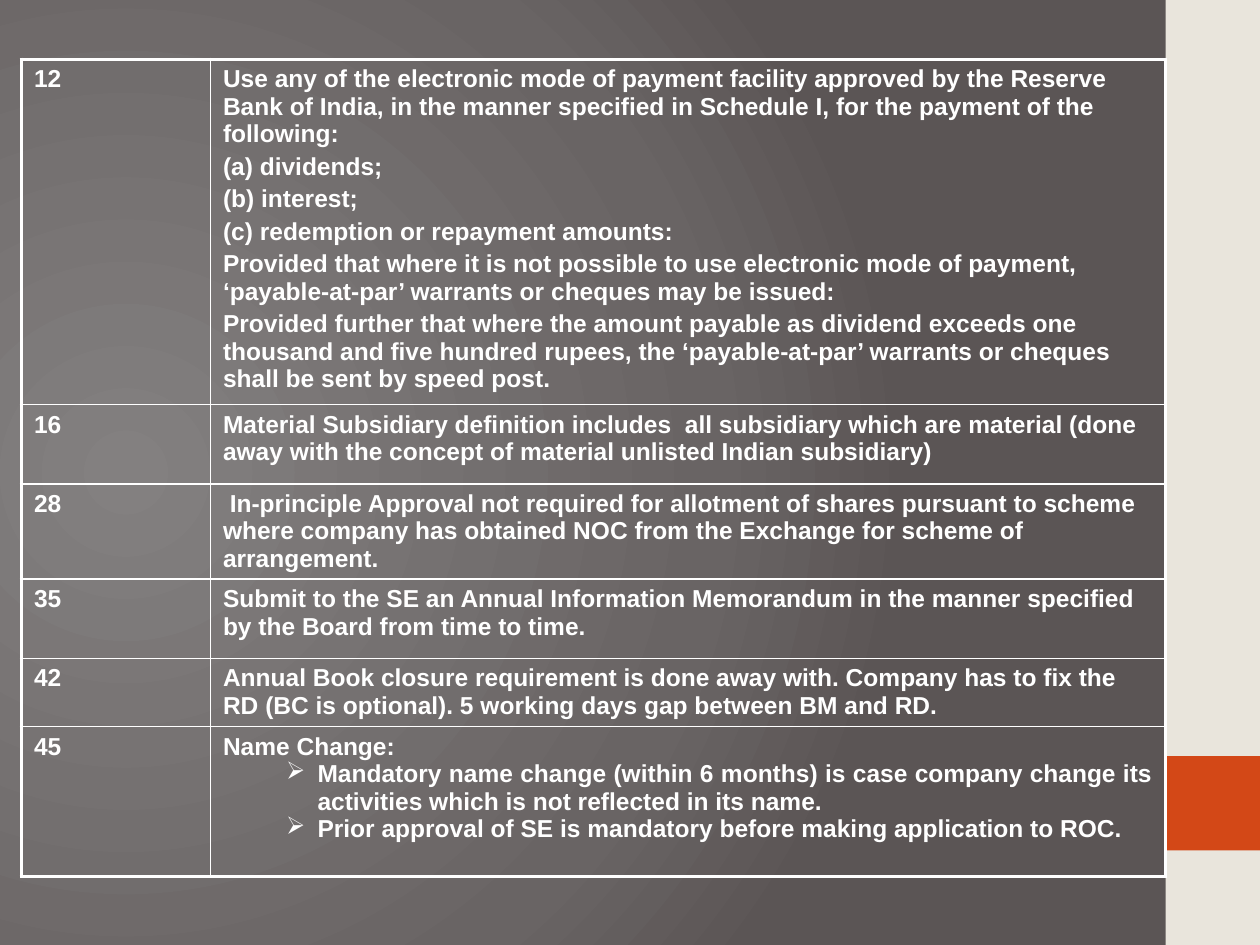
from lxml import etree
from pptx import Presentation
from pptx.dml.color import RGBColor
from pptx.enum.shapes import MSO_SHAPE
from pptx.enum.text import PP_ALIGN
from pptx.oxml import parse_xml
from pptx.oxml.ns import nsdecls, qn
from pptx.util import Inches, Pt

RECTANGLE = MSO_SHAPE.RECTANGLE
JUSTIFY = PP_ALIGN.JUSTIFY
WHITE = "FFFFFF"
THIN, THICK = Pt(1), Pt(2.25)
BULLET = "➢"

ROWS = [
    ("12", 2.74, [
        "Use any of the electronic mode of payment facility approved by the Reserve Bank of India, "
        "in the manner specified in Schedule I, for the payment of the following:",
        "(a) dividends;",
        "(b) interest;",
        "(c) redemption or repayment amounts:",
        "Provided that where it is not possible to use electronic mode of payment, "
        "‘payable-at-par’ warrants or cheques may be issued:",
        "Provided further that where the amount payable as dividend exceeds one thousand and five "
        "hundred rupees, the ‘payable-at-par’ warrants or cheques shall be sent by speed post."]),
    ("16", 0.63, [
        "Material Subsidiary definition includes  all subsidiary which are material "
        "(done away with the concept of material unlisted Indian subsidiary)"]),
    ("28", 0.75, [
        " In-principle Approval not required for allotment of shares pursuant to scheme where "
        "company has obtained NOC from the Exchange for scheme of arrangement."]),
    ("35", 0.63, [
        "Submit to the SE an Annual Information Memorandum in the manner specified "
        "by the Board from time to time."]),
    ("42", 0.54, [
        "Annual Book closure requirement is done away with. Company has to fix the RD "
        "(BC is optional). 5 working days gap between BM and RD."]),
    ("45", 1.19, [
        "Name Change:",
        BULLET + "Mandatory name change (within 6 months) is case company change its "
        "activities which is not reflected in its name.",
        BULLET + "Prior approval of SE is mandatory before making application to ROC."]),
]


def color(hex_string):
    return RGBColor.from_string(hex_string)


def set_border(cell, side, width):
    line = etree.SubElement(cell._tc.get_or_add_tcPr(), qn("a:ln" + side), w=str(width))
    fill = etree.SubElement(line, qn("a:solidFill"))
    etree.SubElement(fill, qn("a:srgbClr"), val=WHITE)


deck = Presentation()
deck.slide_width, deck.slide_height = Inches(10), Inches(7.5)
page = deck.slides.add_slide(deck.slide_layouts[6])

# Radial background
stops = "".join(f'<a:gs pos="{position * 1000}"><a:srgbClr val="{shade}"/></a:gs>'
                for position, shade in [(0, "838080"), (75, "696464"), (100, "5B5555")])
page._element.cSld.insert(0, parse_xml(
    f'<p:bg {nsdecls("p", "a")}><p:bgPr><a:gradFill rotWithShape="1"><a:gsLst>{stops}</a:gsLst>'
    '<a:path path="circle"><a:fillToRect l="20000" t="50000" r="100000" b="50000"/></a:path>'
    '</a:gradFill><a:effectLst/></p:bgPr></p:bg>'))

# Side strip with accent block
for top, height, shade in [(0, 7.5, "E9E5DC"), (6, 0.75, "D34817")]:
    strip = page.shapes.add_shape(RECTANGLE, Inches(9.25), Inches(top), Inches(0.75), Inches(height))
    strip.shadow.inherit = False
    strip.fill.solid()
    strip.fill.fore_color.rgb = color(shade)
    strip.line.fill.background()

# Regulation table
total_height = sum(height for _, height, _ in ROWS)
table = page.shapes.add_table(len(ROWS), 2, Inches(0.17), Inches(0.47),
                              Inches(9.08), Inches(total_height)).table
table.first_row = table.horz_banding = False
table.columns[0].width, table.columns[1].width = Inches(1.5), Inches(7.58)

for row_index, (number, height, lines) in enumerate(ROWS):
    table.rows[row_index].height = Inches(height)
    has_bullets = any(line.startswith(BULLET) for line in lines)
    for column_index, texts in enumerate([[number], lines]):
        cell = table.cell(row_index, column_index)

        # Thick outer frame, thin inner lines
        outer = {"L": column_index == 0, "R": column_index == 1,
                 "T": row_index == 0, "B": row_index == len(ROWS) - 1}
        for side, is_outer in outer.items():
            set_border(cell, side, THICK if is_outer else THIN)
        cell.fill.background()

        # Cell text
        for index, text in enumerate(texts):
            frame = cell.text_frame
            para = frame.add_paragraph() if index else frame.paragraphs[0]
            para.text = text.removeprefix(BULLET)
            para.font.name, para.font.size, para.font.bold = "Arial", Pt(14), True
            para.font.color.rgb = color(WHITE)
            if has_bullets and column_index == 1:
                para.alignment = JUSTIFY
            elif index:
                para.space_before = Pt(2.8)
            if text.startswith(BULLET):
                para.level = 1
                properties = para._p.get_or_add_pPr()
                properties.set("marL", str(Inches(0.75)))
                properties.set("indent", str(Inches(-0.25)))
                bullet = etree.Element(qn("a:buChar"), char=BULLET)
                properties.insert_element_before(bullet, "a:tabLst", "a:defRPr", "a:extLst")

deck.save("out.pptx")
